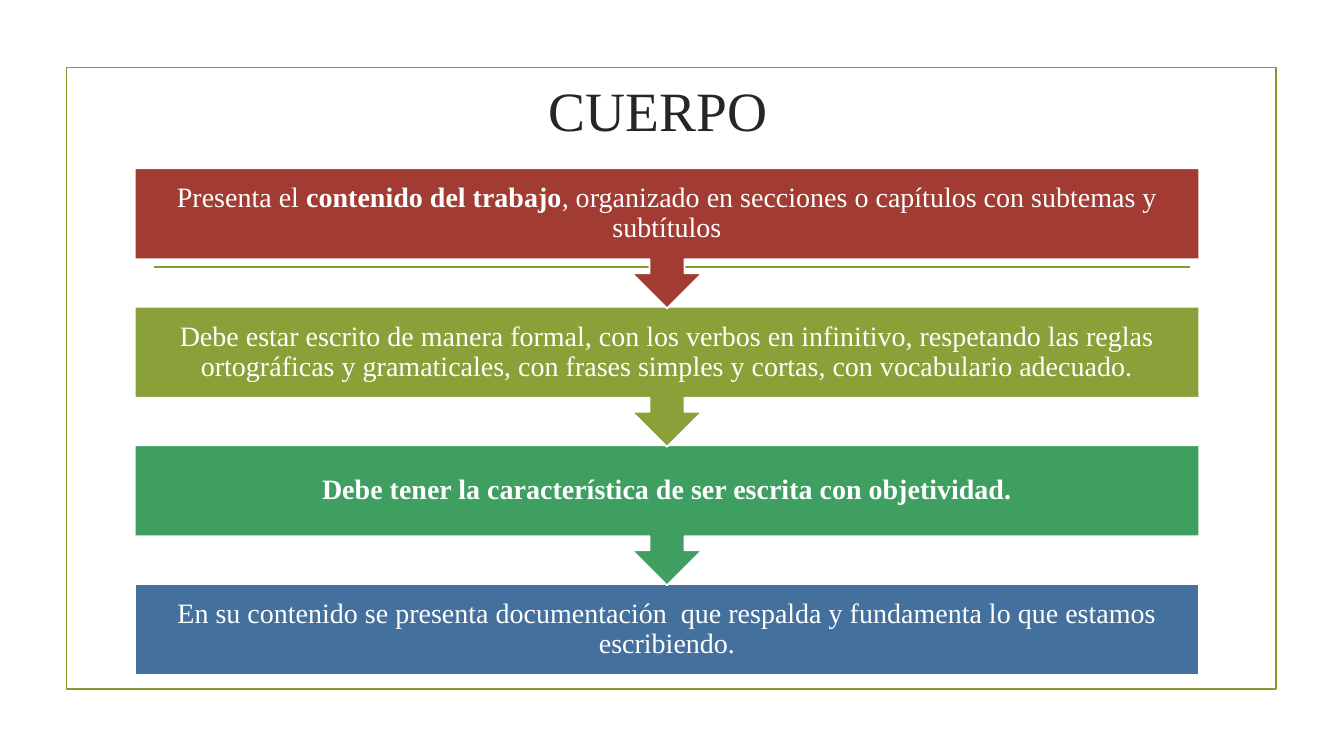
from dataclasses import dataclass

from lxml.etree import SubElement
from pptx import Presentation
from pptx.dml.color import RGBColor
from pptx.enum.shapes import MSO_CONNECTOR as Connector, MSO_SHAPE as Shape
from pptx.enum.text import MSO_ANCHOR as Anchor, PP_ALIGN as Align
from pptx.oxml.ns import qn
from pptx.util import Cm, Pt


@dataclass(frozen=True)
class Theme:
    font: str = "Times New Roman"
    title_size: float = 39.6
    step_size: float = 20
    line_width: float = 1.25
    title: str = "262626"
    accent: str = "83992A"
    white: str = "FFFFFF"
    steps: tuple = ("A23C33", "89A138", "3E9F61", "44709D")


THEME = Theme()

# Each step is a list of (text, bold) spans
STEPS = [
    [("Presenta el ", False), ("contenido del trabajo", True),
     (", organizado en secciones o capítulos con subtemas y subtítulos", False)],
    [("Debe estar escrito de manera formal, con los verbos en infinitivo, "
      "respetando las reglas ortográficas y gramaticales, con frases simples "
      "y cortas, con vocabulario adecuado.", False)],
    [("Debe tener la característica de ser escrita con objetividad.", True)],
    [("En su contenido se presenta documentación  que respalda y fundamenta "
      "lo que estamos escribiendo.", False)],
]

# Step layout in centimetres
STEP_LEFT, STEP_TOP, STEP_WIDTH = 3.4, 4.24, 26.82
STEP_PITCH, BOX_HEIGHT, CALLOUT_HEIGHT = 3.49, 2.29, 3.53


def set_attributes(target, values):
    for name, value in values.items():
        setattr(target, name, value)


def set_line(line, color):
    line.color.rgb = RGBColor.from_string(color)
    line.width = Pt(THEME.line_width)


def write_spans(frame, spans, size, color, margin):
    set_attributes(frame, {
        "word_wrap": True, "vertical_anchor": Anchor.MIDDLE,
        "margin_left": margin, "margin_right": margin,
        "margin_top": margin, "margin_bottom": margin,
    })
    para = frame.paragraphs[0]
    set_attributes(para, {"alignment": Align.CENTER, "line_spacing": 0.9})
    for text, bold in spans:
        span = para.add_run()
        span.text = text
        set_attributes(span.font, {"name": THEME.font, "size": Pt(size), "bold": bold})
        span.font.color.rgb = RGBColor.from_string(color)


def add_box(page, kind, left, top, width, height, fill, line):
    box = page.shapes.add_shape(kind, Cm(left), Cm(top), Cm(width), Cm(height))
    box.shadow.inherit = False
    if fill:
        box.fill.solid()
        box.fill.fore_color.rgb = RGBColor.from_string(fill)
    else:
        box.fill.background()
    set_line(box.line, line)
    return box


def add_rule(page, left, right, top):
    rule = page.shapes.add_connector(
        Connector.STRAIGHT, Cm(left), Cm(top), Cm(right), Cm(top))
    set_line(rule.line, THEME.accent)
    SubElement(rule.element.spPr, qn("a:effectLst"))


def add_title(page, text):
    title = page.shapes.title
    set_attributes(title, {"left": Cm(3.61), "top": Cm(2.03),
                           "width": Cm(26.29), "height": Cm(1.68)})
    write_spans(title.text_frame, [(text, False)],
                THEME.title_size, THEME.title, Cm(0.13))


def add_step(page, index, spans):
    is_last = index == len(STEPS) - 1
    kind = Shape.RECTANGLE if is_last else Shape.DOWN_ARROW_CALLOUT
    height = BOX_HEIGHT if is_last else CALLOUT_HEIGHT
    box = add_box(page, kind, STEP_LEFT, STEP_TOP + index * STEP_PITCH,
                  STEP_WIDTH, height, THEME.steps[index], THEME.white)
    write_spans(box.text_frame, spans, THEME.step_size, THEME.white, Cm(0.41))


def main():
    deck = Presentation()
    set_attributes(deck, {"slide_width": Cm(33.87), "slide_height": Cm(19.05)})
    page = deck.slides.add_slide(deck.slide_layouts[5])

    # Frame, rule and title
    add_box(page, Shape.RECTANGLE, 1.68, 1.7, 30.48, 15.67, None, THEME.accent)
    add_rule(page, 3.89, 30, 6.73)
    add_title(page, "CUERPO ")

    # Steps, last one first so each arrow lies over the next box
    for index, spans in reversed(list(enumerate(STEPS))):
        add_step(page, index, spans)

    deck.save("out.pptx")


if __name__ == "__main__":
    main()
